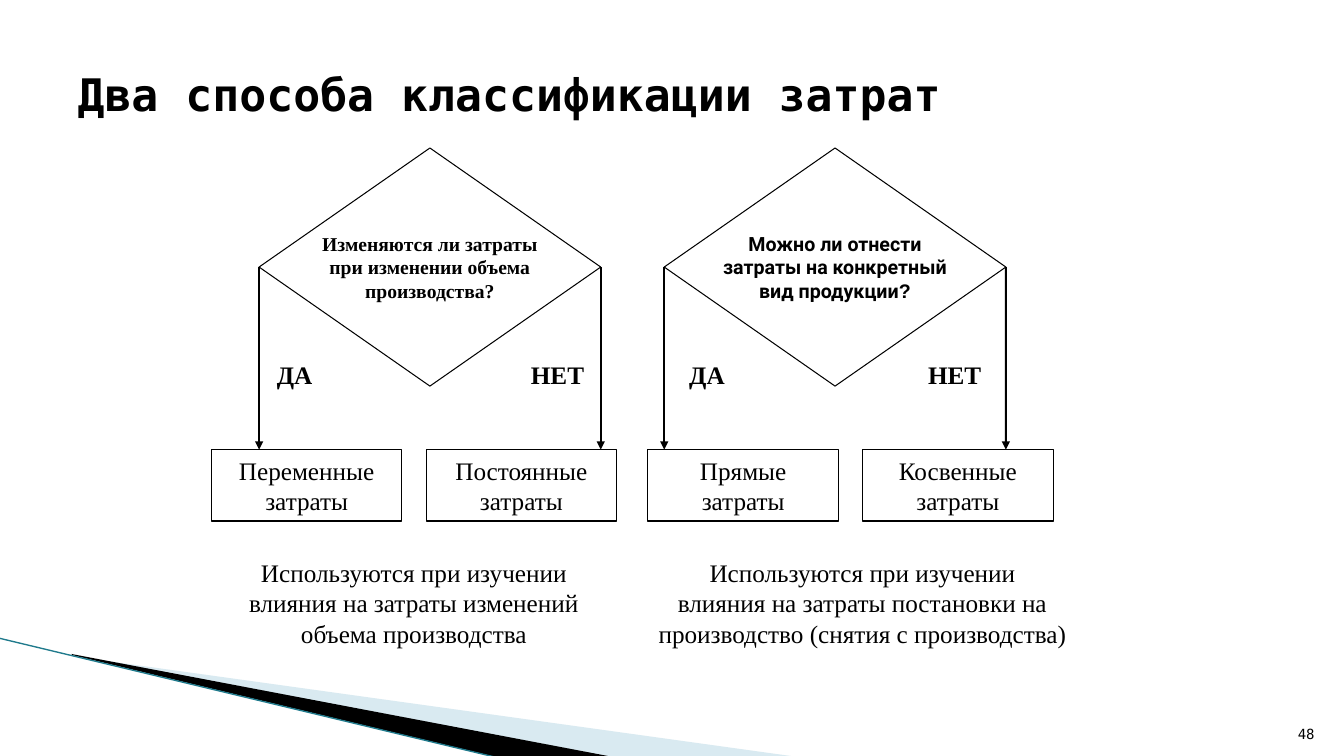
from dataclasses import dataclass

from lxml.etree import SubElement
from pptx import Presentation
from pptx.dml.color import RGBColor
from pptx.enum.shapes import MSO_CONNECTOR as Link, MSO_SHAPE as Preset
from pptx.enum.text import MSO_ANCHOR as Anchor, PP_ALIGN as Align
from pptx.oxml.ns import qn
from pptx.util import Cm, Pt

SERIF = "Times New Roman"
MONO = "DejaVu Sans Mono"
BLACK = "000000"
WHITE = "FFFFFF"

DIAMOND_TOP, DIAMOND_WIDTH, DIAMOND_HEIGHT = 3.73, 8.61, 6.0
BOX_TOP, BOX_WIDTH, BOX_HEIGHT = 11.33, 4.8, 1.8
BOX_STEP = 5.41
ANSWER_TOP, ANSWER_HEIGHT = 8.92, 1.02
NOTE_TOP, NOTE_HEIGHT = 13.92, 2.54


@dataclass
class Style:
    size: float
    font: str = SERIF
    bold: bool = False
    align: Align = Align.CENTER


@dataclass
class Scheme:
    """One way to classify costs: a question, two answers and its use."""
    diamond_left: float
    question: list[str]
    question_font: str
    mark_font: str
    box_left: float
    kinds: tuple[str, str]
    yes_left: float
    no_left: float
    note_left: float
    note_width: float
    note: list[str]


SCHEMES = [
    Scheme(6.53, ["Изменяются ли затраты", "при изменении объема", "производства"],
           SERIF, SERIF, 5.33, ("Переменные", "Постоянные"), 6.73, 13.13, 4.93, 11.0,
           ["Используются при изучении", "влияния на затраты изменений",
            "объема производства"]),
    Scheme(16.74, ["Можно ли отнести", "затраты на конкретный", "вид продукции"],
           "Roboto", "Arial", 16.33, ("Прямые", "Косвенные"), 17.12, 23.14, 15.93, 11.61,
           ["Используются при изучении",
            "влияния на затраты постановки на производство (снятия с производства)"]),
]


def paint(target, colour: str) -> None:
    """Give a fill or a line one solid colour."""
    target.solid()
    target.fore_color.rgb = RGBColor.from_string(colour)


def add_span(para, text: str, style: Style) -> None:
    span = para.add_run()
    span.text = text
    span.font.size = Pt(style.size)
    span.font.name = style.font
    span.font.bold = style.bold
    span.font.color.rgb = RGBColor.from_string(BLACK)


def write(frame, lines: list[str], style: Style) -> None:
    """Write each line as a paragraph of its own."""
    for number, line in enumerate(lines):
        para = frame.add_paragraph() if number else frame.paragraphs[0]
        para.alignment = style.align
        add_span(para, line, style)


def add_label(page, left: float, top: float, width: float, height: float,
              lines: list[str], style: Style, anchor: Anchor = Anchor.TOP) -> None:
    frame = page.shapes.add_textbox(Cm(left), Cm(top), Cm(width), Cm(height)).text_frame
    frame.word_wrap = True
    frame.vertical_anchor = anchor
    write(frame, lines, style)


def add_block(page, preset: Preset, left: float, top: float, width: float,
              height: float, lines: list[str], style: Style):
    block = page.shapes.add_shape(preset, Cm(left), Cm(top), Cm(width), Cm(height))
    block.shadow.inherit = False
    paint(block.fill, WHITE)
    paint(block.line.fill, BLACK)
    block.line.width = Pt(0.75)
    block.text_frame.word_wrap = False
    block.text_frame.vertical_anchor = Anchor.MIDDLE
    write(block.text_frame, lines, style)
    return block


def add_line(page, x1: float, y1: float, x2: float, y2: float, colour: str, width: float):
    line = page.shapes.add_connector(Link.STRAIGHT, Cm(x1), Cm(y1), Cm(x2), Cm(y2))
    paint(line.line.fill, colour)
    line.line.width = Pt(width)
    SubElement(line._element.spPr, qn("a:effectLst"))
    return line


def add_arrow(page, diamond, side: int, x: float) -> None:
    """Drop an arrow from a side corner of the diamond to the box row."""
    arrow = add_line(page, x, DIAMOND_TOP + DIAMOND_HEIGHT / 2, x, BOX_TOP, BLACK, 1.5)
    arrow.begin_connect(diamond, side)
    SubElement(arrow.line._get_or_add_ln(), qn("a:tailEnd"), type="triangle")


def add_wedge(page, points: list[tuple[float, float]], colour: str):
    start, *others = [(Cm(x), Cm(y)) for x, y in points]
    builder = page.shapes.build_freeform(*start)
    builder.add_line_segments(others, close=True)
    wedge = builder.convert_to_shape()
    wedge.shadow.inherit = False
    paint(wedge.fill, colour)
    wedge.line.fill.background()
    return wedge


def add_corner(page) -> None:
    """Draw the slanted decoration at the lower left."""
    pale = add_wedge(page, [(1.85, 16.54), (20.14, 19.08), (15.44, 19.08), (1.85, 16.51)],
                     "A0CBDC")
    tint = pale._element.spPr.find(qn("a:solidFill"))[0]
    SubElement(tint, qn("a:alpha"), val="40000")
    add_wedge(page, [(1.8, 16.48), (15.47, 19.08), (12.6, 19.1), (1.83, 16.51)], BLACK)
    add_line(page, -0.03, 16.08, 12.57, 19.1, "1F7A8C", 0.95)


def add_title(page, text: str) -> None:
    title = page.shapes.title
    title.left, title.top, title.width, title.height = Cm(1.7), Cm(0.76), Cm(30.48), Cm(3.18)
    title.text_frame.vertical_anchor = Anchor.MIDDLE
    write(title.text_frame, [text], Style(32, MONO, True, Align.LEFT))


def add_scheme(page, scheme: Scheme) -> None:
    diamond = add_block(page, Preset.DIAMOND, scheme.diamond_left, DIAMOND_TOP,
                        DIAMOND_WIDTH, DIAMOND_HEIGHT, scheme.question,
                        Style(14, scheme.question_font, True))
    add_span(diamond.text_frame.paragraphs[-1], "?", Style(14, scheme.mark_font, True))
    add_arrow(page, diamond, 1, scheme.diamond_left)
    add_arrow(page, diamond, 3, scheme.diamond_left + DIAMOND_WIDTH)

    answer = Style(18, bold=True, align=Align.LEFT)
    for left, width, text in ((scheme.yes_left, 1.6, "ДА"), (scheme.no_left, 2.01, "НЕТ")):
        add_label(page, left, ANSWER_TOP, width, ANSWER_HEIGHT, [text], answer)

    for number, kind in enumerate(scheme.kinds):
        add_block(page, Preset.RECTANGLE, scheme.box_left + number * BOX_STEP, BOX_TOP,
                  BOX_WIDTH, BOX_HEIGHT, [kind, "затраты"], Style(18))
    add_label(page, scheme.note_left, NOTE_TOP, scheme.note_width, NOTE_HEIGHT,
              scheme.note, Style(18))


def main() -> None:
    deck = Presentation()
    deck.slide_width, deck.slide_height = Cm(33.87), Cm(19.05)
    page = deck.slides.add_slide(deck.slide_layouts[5])
    add_corner(page)
    add_label(page, 32.03, 17.81, 1.35, 1.02, ["48"],
              Style(10, MONO, align=Align.RIGHT), Anchor.BOTTOM)
    add_title(page, "Два способа классификации затрат")
    for scheme in SCHEMES:
        add_scheme(page, scheme)
    deck.save("out.pptx")


if __name__ == "__main__":
    main()
